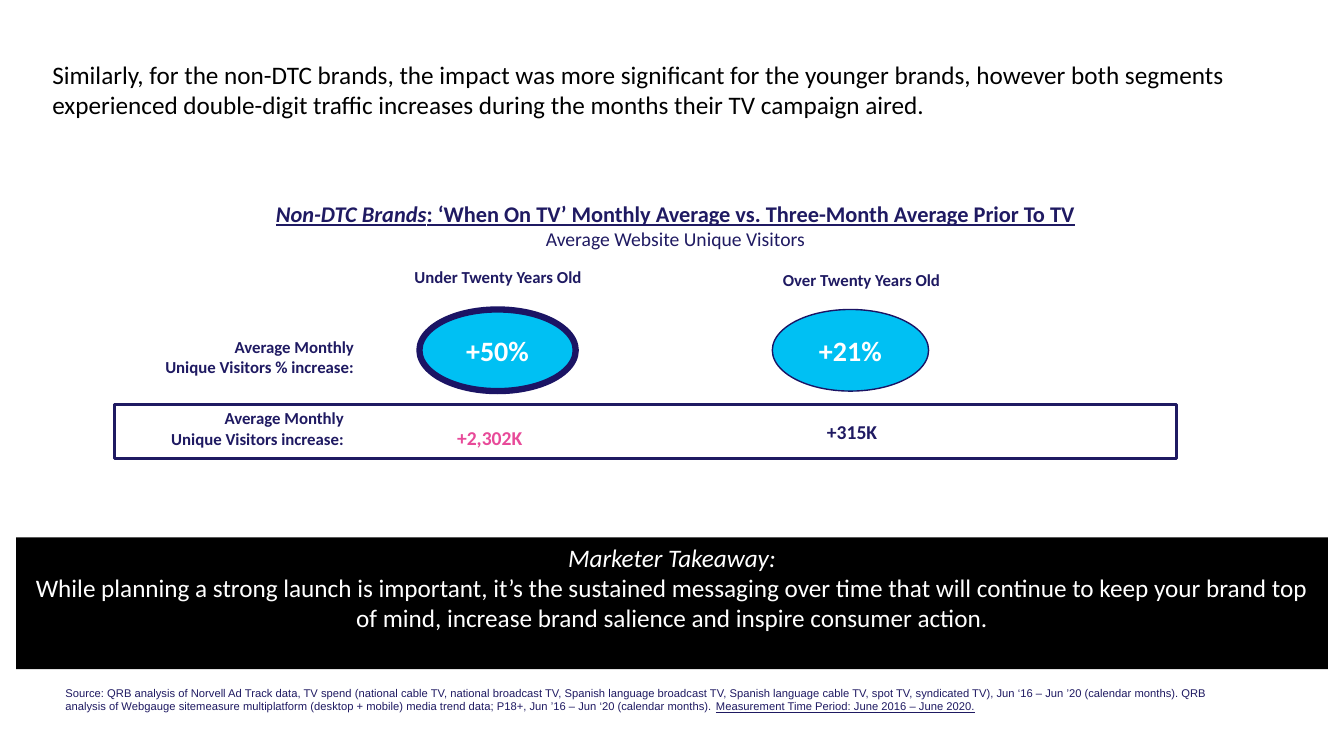
from pptx import Presentation
from pptx.dml.color import RGBColor
from pptx.enum.shapes import MSO_SHAPE
from pptx.enum.text import MSO_ANCHOR, PP_ALIGN
from pptx.util import Inches, Pt

LEFT, CENTER, RIGHT = PP_ALIGN.LEFT, PP_ALIGN.CENTER, PP_ALIGN.RIGHT
TOP, MIDDLE = MSO_ANCHOR.TOP, MSO_ANCHOR.MIDDLE
RECTANGLE, OVAL = MSO_SHAPE.RECTANGLE, MSO_SHAPE.OVAL
NAVY, DEEP_NAVY, CYAN, PINK = "1F1A62", "1B1464", "00C0F3", "E84A99"
BLACK, WHITE = "000000", "FFFFFF"

# A text is a list of paragraphs; a paragraph is a list of (words, format changes).
HEADLINE = [[("Similarly, for the non-DTC brands, the impact was more significant for the "
              "younger brands, however both segments experienced double-digit traffic "
              "increases during the months their TV campaign aired.", {})]]
CHART_TITLE = [
    [("Non-DTC Brands", {"italic": True}),
     (": ‘When On TV’ Monthly Average vs. Three-Month Average Prior To TV", {})],
    [("Average Website Unique Visitors", {"size": 14, "bold": False, "underline": False})],
]
ROW_LABELS = [
    (("Average Monthly", "Unique Visitors % increase:"), (0.1, 3.29, 3.51, 0.5)),
    (("Average Monthly", "Unique Visitors increase:"), (0, 4, 3.51, 0.5)),
]
SEGMENTS = [
    {"name": "Under Twenty Years Old", "name_at": (3.81, 2.6, 2.26, 0.3),
     "percent": "+50%", "oval_left": 4.16, "outline": 4.5,
     "visitors": "+2,302K", "visitors_at": (4.06, 4.18, 1.22, 0.34), "color": PINK},
    {"name": "Over Twenty Years Old", "name_at": (7.61, 2.63, 1.87, 0.3),
     "percent": "+21%", "oval_left": 7.66, "outline": 1,
     "visitors": "+315K", "visitors_at": (7.84, 4.12, 0.96, 0.34), "color": NAVY},
]
TAKEAWAY = [
    [("Marketer Takeaway:", {"italic": True})],
    [("While planning a strong launch is important, it’s the sustained messaging over time "
      "that will continue to keep your brand top of mind, increase brand salience and "
      "inspire consumer action.", {})],
]
SOURCE = [[
    ("Source: QRB analysis of Norvell Ad Track data, TV spend (national cable TV, national "
     "broadcast TV, Spanish language broadcast TV, Spanish language cable TV, spot TV, "
     "syndicated TV), Jun ‘16 – Jun ’20 (calendar months). QRB analysis of Webgauge "
     "sitemeasure multiplatform (desktop + mobile) media trend data; P18+, Jun ’16 – "
     "Jun ‘20 (calendar months). ", {}),
    ("Measurement Time Period: June 2016 – June 2020.", {"underline": True}),
]]


def rgb(color):
    return RGBColor.from_string(color)


def lines(*texts):
    """Turn plain strings into one-run paragraphs."""
    return [[(text, {})] for text in texts]


def write(shape, paragraphs, align=LEFT, anchor=TOP, before=0, **base):
    frame = shape.text_frame
    frame.word_wrap = True
    frame.vertical_anchor = anchor
    for index, runs in enumerate(paragraphs):
        paragraph = frame.add_paragraph() if index else frame.paragraphs[0]
        paragraph.alignment = align
        paragraph.space_before = Pt(before)
        for words, changes in runs:
            style = {"font": "Calibri", "color": NAVY, **base, **changes}
            run = paragraph.add_run()
            run.text = words
            run.font.name = style["font"]
            run.font.size = Pt(style["size"])
            run.font.color.rgb = rgb(style["color"])
            run.font.bold = style.get("bold", False)
            run.font.italic = style.get("italic", False)
            run.font.underline = style.get("underline", False)


def add_text(slide, box, paragraphs, **style):
    write(slide.shapes.add_textbox(*map(Inches, box)), paragraphs, **style)


def add_block(slide, kind, box, fill, line=None, weight=0):
    block = slide.shapes.add_shape(kind, *map(Inches, box))
    block.shadow.inherit = False
    block.fill.solid()
    block.fill.fore_color.rgb = rgb(fill)
    if line:
        block.line.color.rgb = rgb(line)
        block.line.width = Pt(weight)
    else:
        block.line.fill.background()
    return block


def main():
    deck = Presentation()
    deck.slide_width, deck.slide_height = Inches(13.33), Inches(7.5)
    slide = deck.slides.add_slide(deck.slide_layouts[6])

    add_text(slide, (0.42, 0.54, 12.19, 0.71), HEADLINE, size=18, color=BLACK)
    add_block(slide, RECTANGLE, (1.14, 4.01, 10.53, 0.54), WHITE, NAVY, 2.25)
    for label, box in ROW_LABELS:
        add_text(slide, box, lines(*label), align=RIGHT, size=12, bold=True)

    for segment in SEGMENTS:
        oval = add_block(slide, OVAL, (segment["oval_left"], 3.07, 1.55, 0.81),
                         CYAN, DEEP_NAVY, segment["outline"])
        write(oval, lines(segment["percent"]), align=CENTER, anchor=MIDDLE,
              size=20, bold=True, color=WHITE)
        add_text(slide, segment["name_at"], lines(segment["name"]),
                 align=CENTER, size=12, bold=True)
        add_text(slide, segment["visitors_at"], lines(segment["visitors"]),
                 align=RIGHT, size=14, bold=True, color=segment["color"])

    add_text(slide, (0.17, 1.94, 13.06, 0.61), CHART_TITLE,
             align=CENTER, size=16, bold=True, underline=True)
    banner = add_block(slide, RECTANGLE, (0.16, 5.33, 13.01, 1.31), BLACK)
    write(banner, TAKEAWAY, align=CENTER, size=18, color=WHITE)
    add_text(slide, (0.55, 6.76, 11.56, 0.38), SOURCE, before=1.6, size=8, font="Arial")

    deck.save("out.pptx")


if __name__ == "__main__":
    main()
